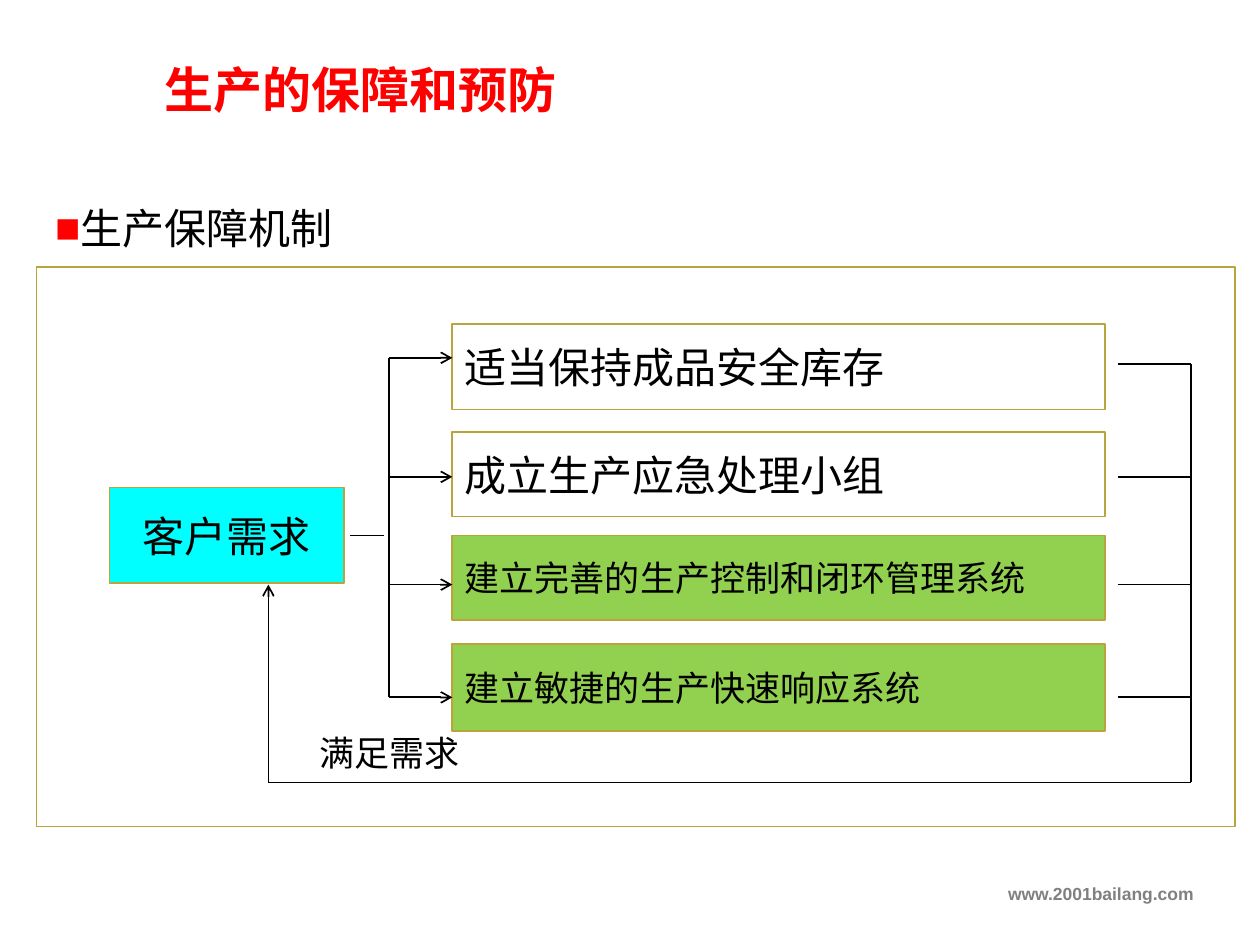
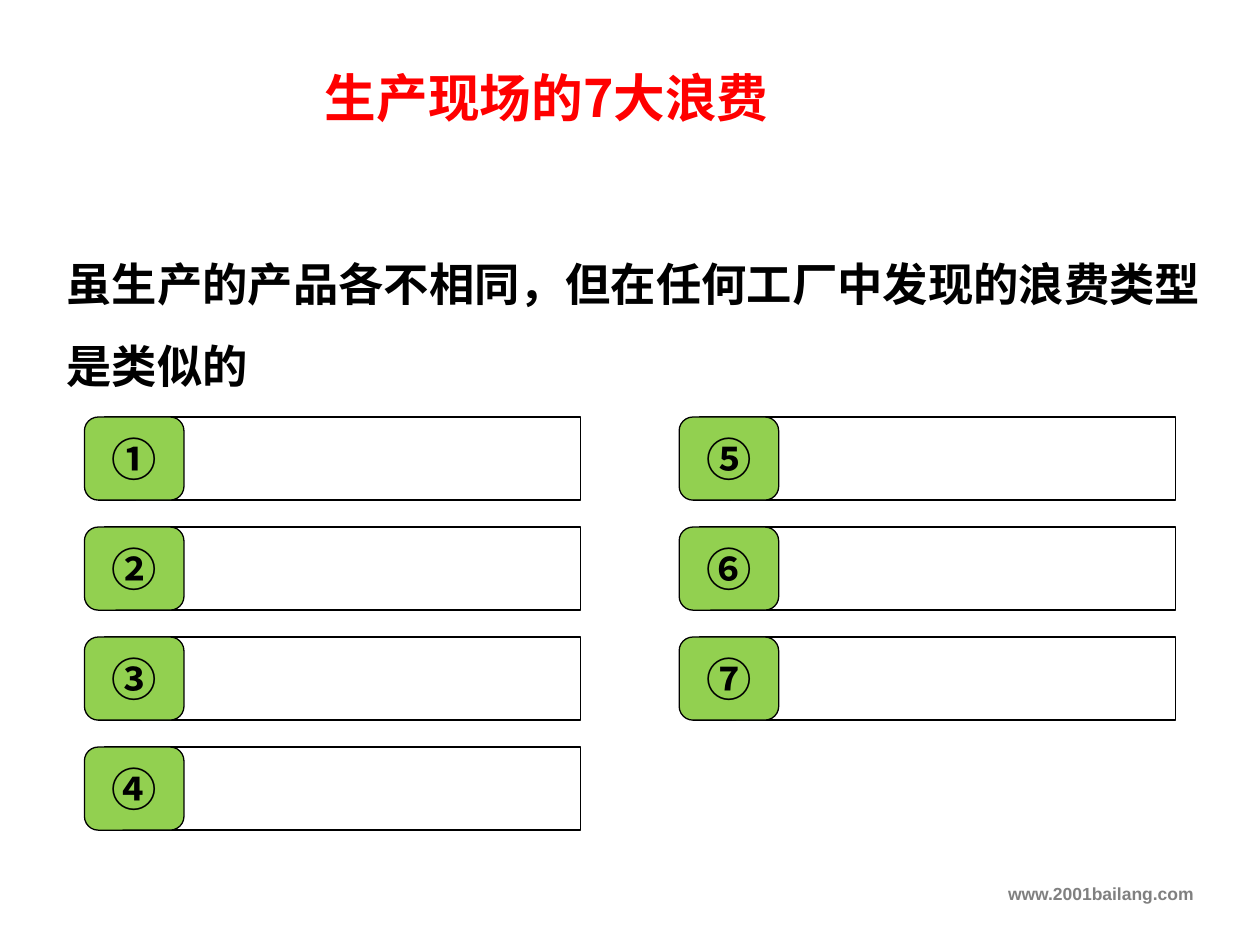
from dataclasses import dataclass

from lxml import etree
from pptx import Presentation
from pptx.dml.color import RGBColor
from pptx.enum import shapes, text
from pptx.oxml import ns
from pptx.util import Inches, Pt

COLS, ROWS = 100, 75
WIDTH, HEIGHT = Inches(10), Inches(7.5)


@dataclass(frozen=True)
class Theme:
    red: str = "FF0000"
    black: str = "000000"
    white: str = "FFFFFF"
    grey: str = "808080"
    cyan: str = "00FFFF"
    green: str = "92D050"
    gold: str = "BAA53D"
    latin: str = "Arial"
    cjk: str = "Noto Sans CJK SC"
    footer: float = 10
    small: float = 20
    body: float = 24
    strong: float = 25.9
    title: float = 28
    big_title: float = 29.5
    hairline: float = 0.75
    rule: float = 1


T = Theme()


def rgb(value):
    return RGBColor.from_string(value)


def sub(parent, tag, **attrs):
    return etree.SubElement(parent, ns.qn(tag), **attrs)


def write(tf, words, size=T.body, color=T.black, font=T.latin, bold=False,
          align=text.PP_ALIGN.LEFT, anchor=text.MSO_ANCHOR.TOP,
          wrap=True, spacing=None, bullet=None):
    tf.word_wrap = wrap
    tf.vertical_anchor = anchor
    p = tf.paragraphs[0]
    p.alignment = align
    if spacing:
        p.line_spacing = spacing
    if bullet:
        pPr = p._p.get_or_add_pPr()
        sub(sub(pPr, "a:buClr"), "a:srgbClr", val=T.red)
        sub(pPr, "a:buFont", typeface=T.latin)
        sub(pPr, "a:buChar", char=bullet)
    r = p.add_run()
    r.text = words
    r.font.size = Pt(size)
    r.font.bold = bold
    r.font.color.rgb = rgb(color)
    r.font.name = font
    sub(r._r.get_or_add_rPr(), "a:ea", typeface=T.cjk)


class Deck:
    def __init__(self):
        self.prs = Presentation()
        self.prs.slide_width, self.prs.slide_height = WIDTH, HEIGHT
        self.s = None

    def x(self, col):
        return round(WIDTH * col / COLS)

    def y(self, row):
        return round(HEIGHT * row / ROWS)

    def area(self, col, row, cols, rows):
        return self.x(col), self.y(row), self.x(cols), self.y(rows)

    def slide(self):
        self.s = self.prs.slides.add_slide(self.prs.slide_layouts[6])
        self.label("www.2001bailang.com", 0, 69.6, 95.7, 3.5, size=T.footer,
                   color=T.grey, bold=True, align=text.PP_ALIGN.RIGHT)

    def label(self, words, *place, **fmt):
        sp = self.s.shapes.add_textbox(*self.area(*place))
        write(sp.text_frame, words, **fmt)

    def title(self, words, *place, size=T.title):
        self.label(words, *place, size=size, color=T.red, font=T.cjk, bold=True)

    def box(self, *place, words=None, fill=None, line=T.gold, width=T.rule,
            kind=shapes.MSO_SHAPE.RECTANGLE, parent=None, **fmt):
        sp = (parent or self.s).shapes.add_shape(kind, *self.area(*place))
        sp.shadow.inherit = False
        if fill:
            sp.fill.solid()
            sp.fill.fore_color.rgb = rgb(fill)
        else:
            sp.fill.background()
        sp.line.color.rgb = rgb(line)
        sp.line.width = Pt(width)
        if words:
            write(sp.text_frame, words, anchor=text.MSO_ANCHOR.MIDDLE, **fmt)

    def line(self, col1, row1, col2, row2, arrow=False):
        c = self.s.shapes.add_connector(
            shapes.MSO_CONNECTOR.STRAIGHT,
            self.x(col1), self.y(row1), self.x(col2), self.y(row2))
        c.line.color.rgb = rgb(T.black)
        c.line.width = Pt(T.rule)
        if arrow:
            sub(c.line._get_or_add_ln(), "a:tailEnd", type="arrow")
        sub(c._element.spPr, "a:effectLst")

    def numbered_bar(self, number, col, row, rows=6.6):
        grp = self.s.shapes.add_group_shape()
        style = dict(line=T.black, width=T.hairline, parent=grp)
        self.box(col + 1.6, row, 37.8, rows, fill=T.white, **style)
        self.box(col, row, 7.9, rows, words=number, fill=T.green,
                 kind=shapes.MSO_SHAPE.ROUNDED_RECTANGLE, size=T.strong,
                 font=T.cjk, bold=True, wrap=False,
                 align=text.PP_ALIGN.CENTER, **style)


def mechanism_slide(deck):
    deck.slide()
    deck.label("生产保障机制", 3.4, 15.6, 93, 4.6, font=T.cjk, bullet="■")
    deck.title("生产的保障和预防", 12.1, 4.2, 73, 5.7)
    deck.box(2.9, 21.2, 95.1, 44.4)
    deck.box(8.7, 38.7, 18.6, 7.6, words="客户需求", fill=T.cyan,
             align=text.PP_ALIGN.CENTER)

    fork, measure_left, measure_right, join = 30.9, 35.9, 88.7, 94.5
    measures = [
        ("适当保持成品安全库存", 25.7, 6.8, None, T.body, 28.4, 28.9),
        ("成立生产应急处理小组", 34.3, 6.7, None, T.body, 37.85, 37.85),
        ("建立完善的生产控制和闭环管理系统", 42.5, 6.7, T.green, T.small, 46.4, 46.4),
        ("建立敏捷的生产快速响应系统", 51.1, 6.9, T.green, T.small, 55.35, 55.35),
    ]
    for words, row, rows, fill, size, row_in, row_out in measures:
        deck.box(measure_left, row, measure_right - measure_left - 1, rows,
                 words=words, fill=fill, size=size)
        deck.line(fork, row_in, measure_left, row_in, arrow=True)
        deck.line(measure_right, row_out, join, row_out)

    feedback_col, feedback_row = 21.3, 62.1
    deck.line(27.8, 42.5, 30.5, 42.5)
    deck.line(fork, measures[0][-2], fork, measures[-1][-2])
    deck.line(join, measures[0][-1], join, feedback_row)
    deck.line(join, feedback_row, feedback_col, feedback_row)
    deck.line(feedback_col, feedback_row, feedback_col, 46.4, arrow=True)
    deck.label("满足需求", 24.4, 57.6, 13.2, 4.4, size=T.small, wrap=False)


def waste_slide(deck):
    deck.slide()
    deck.title("生产现场的7大浪费", 24.8, 4.7, 54.3, 6, size=T.big_title)
    deck.label("虽生产的产品各不相同，但在任何工厂中发现的浪费类型是类似的",
               4.3, 17.7, 92.1, 14.1, size=T.strong, font=T.cjk, bold=True,
               spacing=1.5)
    for i, number in enumerate("①②③④⑤⑥⑦"):
        column, row = divmod(i, 4)
        deck.numbered_bar(number, 6.7 + 47.2 * column, 33.1 + 8.73 * row)


def main():
    deck = Deck()
    mechanism_slide(deck)
    waste_slide(deck)
    deck.prs.save("out.pptx")


if __name__ == "__main__":
    main()
